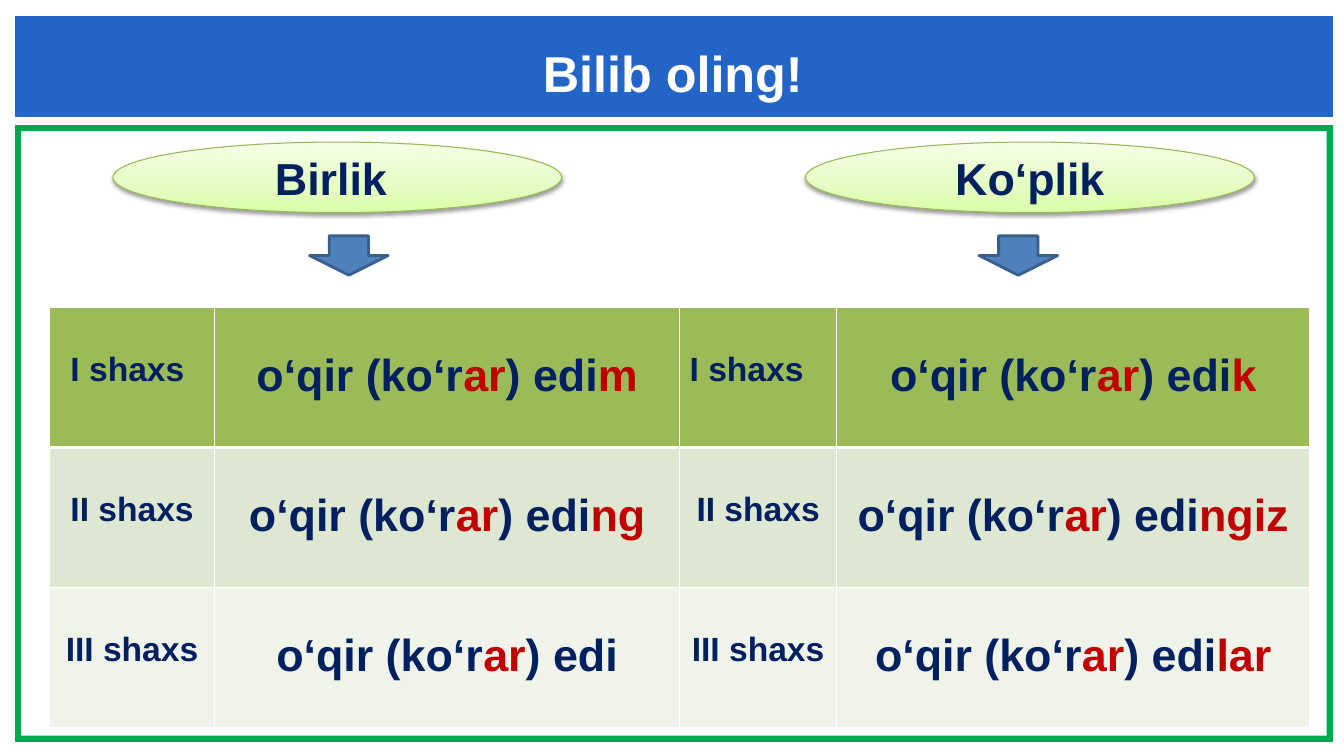
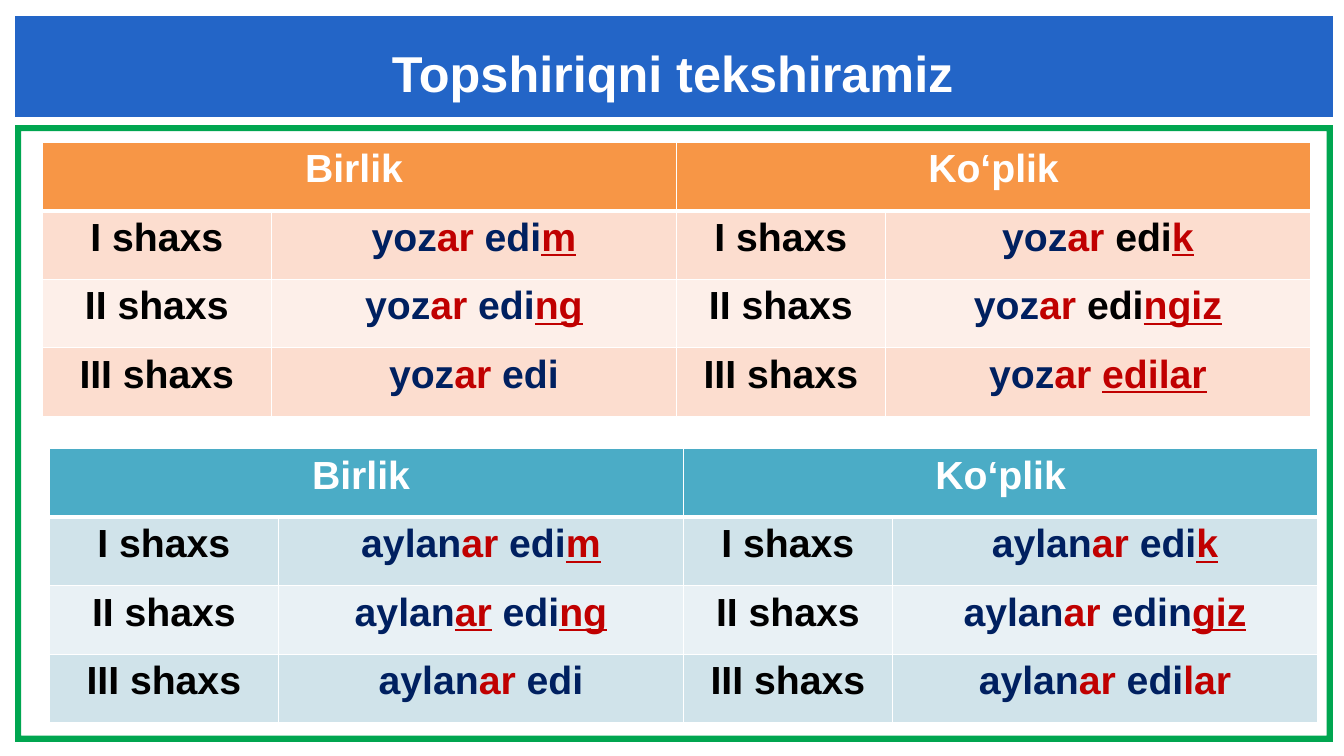
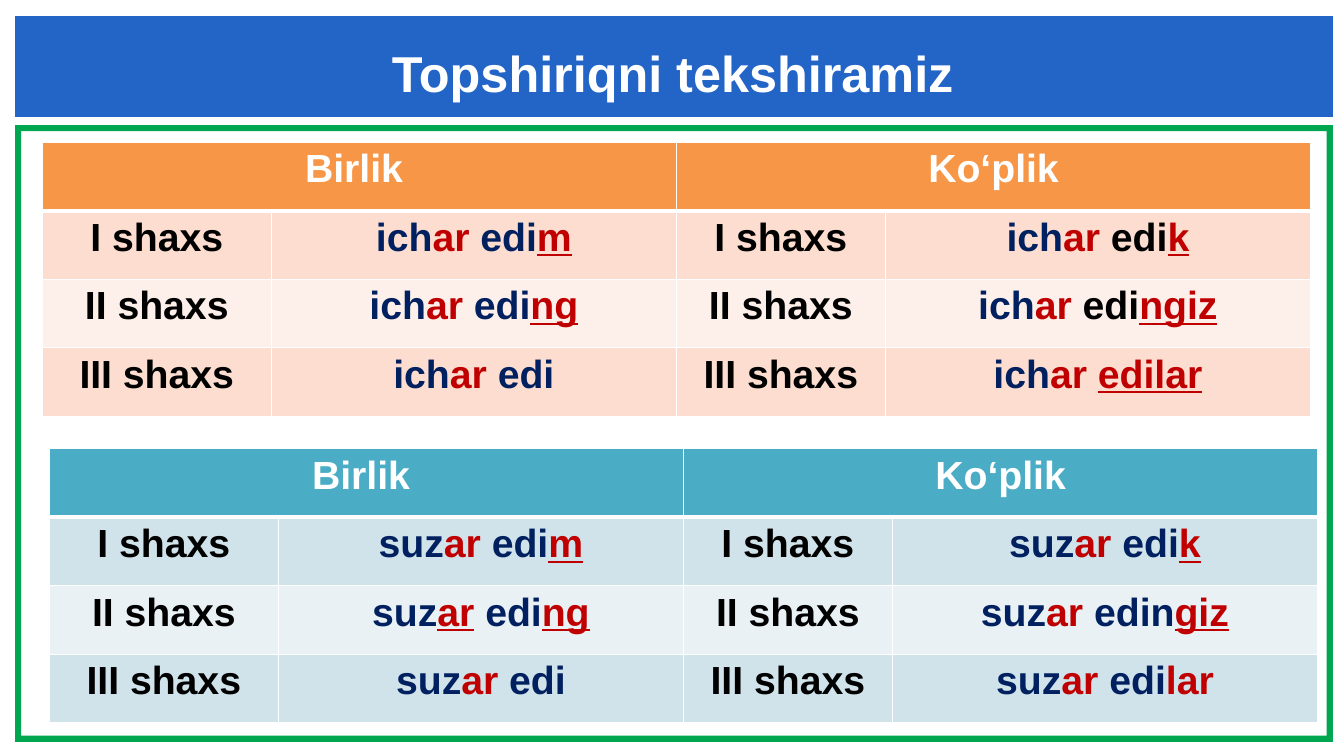
import pptx
import pptx.util
import pptx.dml.color
import pptx.enum.shapes
import pptx.enum.text
import pptx.oxml
import pptx.oxml.ns

Inches = pptx.util.Inches
Pt = pptx.util.Pt
SHAPES = pptx.enum.shapes.MSO_SHAPE
ALIGN = pptx.enum.text.PP_ALIGN
ANCHOR = pptx.enum.text.MSO_ANCHOR

FONT = "Arial"
WHITE, BLACK, NAVY, RED = "FFFFFF", "000000", "002060", "C00000"
BAND_BLUE, FRAME_GREEN = "2365C7", "00A650"
ARROW_BLUE, ARROW_LINE = "4F81BD", "3A5F8C"
GREENS = ("9BBB59", "DEE7D1", "EFF3EA")
ORANGES = ("F79646", "FCDDCF", "FDEFE9")
TEALS = ("4BACC6", "D0E3EA", "E9F1F5")
OVAL_LOW, OVAL_MIDDLE, OVAL_HIGH, OVAL_LINE = "DAFDA7", "E4FCC2", "F5FFE7", "98B955"

BAND_BOX = (0.15, 0.16, 13.07, 1)
FRAME_BOX = (0.15, 1.24, 13.07, 6.12)
TITLE_BOX = (0.85, 0.36, 11.65, 0.71)
UPPER_BOX = (0.42, 1.41, 12.58, 2.72)
LOWER_BOX = (0.49, 4.45, 12.58, 2.72)
PERSON_BOX = (0.49, 3.05, 12.5, 4.17)

HEADINGS = ("Birlik ", "Ko‘plik")
PERSONS = ("I shaxs", "II shaxs", "III shaxs")
MARKS = {"*": (RED, False), "_": (RED, True), "#": (BLACK, False)}

PERSON_ENDINGS = (("|*m", "|*k"), ("|*ng", "|*ngiz"), ("", "|*lar"))
UPPER_FORMS = (
    ("|*ar |edi|_m", "|*ar |#edi|_k"),
    ("|*ar |edi|_ng", "|*ar |#edi|_ngiz"),
    ("|*ar |edi", "|*ar |_edilar"),
)
LOWER_FORMS = (
    ("|*ar |edi|_m", "|*ar |edi|_k"),
    ("|_ar| |edi|_ng", "|*ar |edin|_giz"),
    ("|*ar |edi", "|*ar |edi|*lar"),
)


def rgb(value):
    """Return the colour of a hex string."""
    return pptx.dml.color.RGBColor.from_string(value)


def place(box):
    """Turn a box in inches into lengths."""
    return [Inches(length) for length in box]


def write(frame, text, size=28, colour=NAVY, align=ALIGN.CENTER):
    """Write bold text whose pieces, split by bars, may start with a colour mark."""
    para = frame.paragraphs[0]
    para.alignment = align
    for piece in text.split("|"):
        piece_colour, underline = MARKS.get(piece[0], (colour, False))
        span = para.add_run()
        span.text = piece[1:] if piece[0] in MARKS else piece
        span.font.name = FONT
        span.font.size = Pt(size)
        span.font.bold = True
        span.font.underline = underline
        span.font.color.rgb = rgb(piece_colour)


def add_figure(page, kind, box, fill, line=None, width=1):
    """Add a flat preset shape."""
    figure = page.shapes.add_shape(kind, *place(box))
    figure.shadow.inherit = False
    figure.fill.solid()
    figure.fill.fore_color.rgb = rgb(fill)
    if line:
        figure.line.color.rgb = rgb(line)
        figure.line.width = Pt(width)
    else:
        figure.line.fill.background()
    return figure


def share_background(page):
    """Draw the title band and the frame and move them to the layout."""
    band = add_figure(page, SHAPES.RECTANGLE, BAND_BOX, BAND_BLUE)
    frame = add_figure(page, SHAPES.FRAME, FRAME_BOX, FRAME_GREEN)
    frame.adjustments[0] = 0.01
    tree = page.slide_layout.shapes.element
    for number, figure in enumerate((band, frame)):
        figure.element.nvSpPr.cNvPr.set("id", str(20 + number))
        tree.insert(2 + number, figure.element)


def add_page(deck, title):
    """Add a slide with its title on the band."""
    page = deck.slides.add_slide(deck.slide_layouts[5])
    holder = page.shapes.title
    holder.left, holder.top, holder.width, holder.height = place(TITLE_BOX)
    frame = holder.text_frame
    frame.margin_left = frame.margin_right = frame.margin_top = frame.margin_bottom = 0
    frame.vertical_anchor = ANCHOR.MIDDLE
    frame.auto_size = pptx.enum.text.MSO_AUTO_SIZE.NONE
    write(frame, title, size=36, colour=WHITE)
    return page


def set_borders(cell, top, bottom):
    """Give a cell white borders."""
    properties = cell._tc.get_or_add_tcPr()
    for side, width in (("L", 1), ("R", 1), ("T", top), ("B", bottom)):
        properties.append(pptx.oxml.parse_xml(
            f'<a:ln{side} {pptx.oxml.ns.nsdecls("a")} w="{Pt(width)}"><a:solidFill>'
            f'<a:srgbClr val="{WHITE}"/></a:solidFill></a:ln{side}>'))


def add_grid(page, box, widths, row_count, colours):
    """Add a table with a header colour and two alternating row colours."""
    table = page.shapes.add_table(row_count, len(widths), *place(box)).table
    table.first_row = table.horz_banding = False
    for column, width in zip(table.columns, widths):
        column.width = Inches(width)
    for number, row in enumerate(table.rows):
        row.height = Inches(box[3] / row_count)
        fill = colours[0] if number == 0 else colours[2 - number % 2]
        for cell in row.cells:
            set_borders(cell, 3 if number == 1 else 1, 3 if number == 0 else 1)
            cell.fill.solid()
            cell.fill.fore_color.rgb = rgb(fill)
    return table


def add_verb_table(page, box, stem, forms, colours):
    """Add the singular and plural forms of one verb."""
    table = add_grid(page, box, (2.27, 4.02, 2.07, 4.22), 4, colours)
    for half, heading in enumerate(HEADINGS):
        column = 2 * half
        table.cell(0, column).merge(table.cell(0, column + 1))
        write(table.cell(0, column).text_frame, heading, colour=WHITE)
        for row, person in enumerate(PERSONS, 1):
            write(table.cell(row, column).text_frame, person, colour=BLACK)
            write(table.cell(row, column + 1).text_frame, stem + forms[row - 1][half])


def add_person_table(page, box):
    """Add the table of person endings."""
    table = add_grid(page, box, (1.64, 4.61, 1.56, 4.69), 3, GREENS)
    for row, person in enumerate(PERSONS):
        for half in range(2):
            label, form = (table.cell(row, 2 * half + step) for step in range(2))
            label.margin_top = form.margin_top = Inches(0.43)
            first = row == 0
            write(label.text_frame, person + " " if first and half == 0 else person, size=24,
                  align=ALIGN.LEFT if first and half else ALIGN.CENTER)
            write(form.text_frame, "o‘qir (ko‘r|*ar|) edi" + PERSON_ENDINGS[row][half], size=32)


def add_oval(page, box, text):
    """Add a shaded oval heading with a soft shadow."""
    oval = add_figure(page, SHAPES.OVAL, box, OVAL_LOW, OVAL_LINE, 0.75)
    oval.fill.gradient()
    oval.fill.gradient_angle = 90
    for stop, colour in zip(oval.fill.gradient_stops, (OVAL_LOW, OVAL_HIGH)):
        stop.color.rgb = rgb(colour)
    names = pptx.oxml.ns.nsdecls("a")
    properties = oval.element.spPr
    properties.find(".//" + pptx.oxml.ns.qn("a:gsLst")).insert(1, pptx.oxml.parse_xml(
        f'<a:gs {names} pos="35000"><a:srgbClr val="{OVAL_MIDDLE}"/></a:gs>'))
    properties.find(pptx.oxml.ns.qn("a:effectLst")).append(pptx.oxml.parse_xml(
        f'<a:outerShdw {names} blurRad="{Pt(3.1)}" dist="{Pt(1.6)}" dir="5400000" '
        f'rotWithShape="0"><a:srgbClr val="{BLACK}"><a:alpha val="38000"/></a:srgbClr>'
        '</a:outerShdw>'))
    oval.text_frame.vertical_anchor = ANCHOR.MIDDLE
    write(oval.text_frame, text, size=32)


def add_rule_page(deck):
    """Add the slide that shows the rule."""
    page = add_page(deck, "Bilib oling!")
    add_person_table(page, PERSON_BOX)
    for heading, oval_left, arrow_left in zip(HEADINGS, (1.12, 7.99), (3.07, 9.71)):
        add_oval(page, (oval_left, 1.41, 4.45, 0.7), heading)
        add_figure(page, SHAPES.DOWN_ARROW, (arrow_left, 2.34, 0.78, 0.39),
                   ARROW_BLUE, ARROW_LINE, 2)
    return page


def add_answer_page(deck, upper_stem, lower_stem):
    """Add a slide with the forms of two verbs."""
    page = add_page(deck, "Topshiriqni tekshiramiz")
    add_verb_table(page, UPPER_BOX, upper_stem, UPPER_FORMS, ORANGES)
    add_verb_table(page, LOWER_BOX, lower_stem, LOWER_FORMS, TEALS)


def main():
    """Build and save the deck."""
    deck = pptx.Presentation()
    deck.slide_width, deck.slide_height = Inches(13.33), Inches(7.5)
    share_background(add_rule_page(deck))
    add_answer_page(deck, "yoz", "aylan")
    add_answer_page(deck, "ich", "suz")
    deck.save("out.pptx")


if __name__ == "__main__":
    main()
